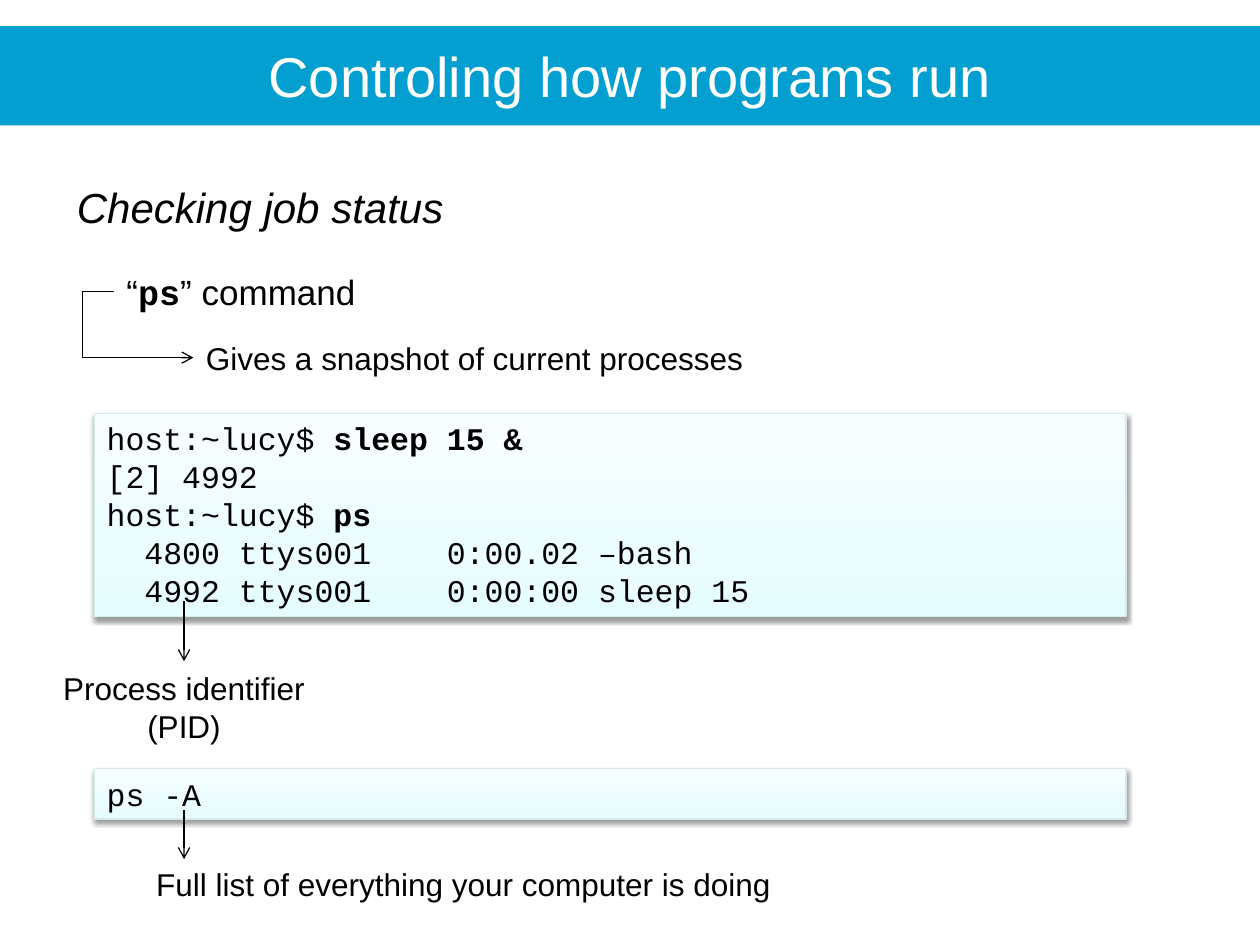
from dataclasses import dataclass

from lxml.etree import SubElement
from pptx import Presentation
from pptx.dml.color import RGBColor
from pptx.enum.shapes import MSO_CONNECTOR, MSO_SHAPE
from pptx.enum.text import MSO_ANCHOR, MSO_AUTO_SIZE, PP_ALIGN
from pptx.oxml.ns import qn
from pptx.util import Cm, Pt


@dataclass(frozen=True)
class Theme:
    body_font: str = "Arial"
    code_font: str = "Courier New"
    band: str = "039FD0"
    title: str = "FFFFFF"
    ink: str = "000000"
    code_border: str = "D5E8EA"
    code_gradient: tuple = ((0, "E6FDFF"), (35, "ECFDFF"), (100, "F8FEFF"))
    title_size: int = 32
    heading_size: int = 24
    topic_size: int = 20
    text_size: int = 18
    line_width: float = 0.75


@dataclass(frozen=True)
class Span:
    text: str
    code: bool = False
    bold: bool = False
    italic: bool = False


def code(text, bold=False):
    return Span(text, code=True, bold=bold)


def add_colour(parent, colour):
    return SubElement(parent, qn("a:srgbClr"), val=colour)


class SlideBuilder:
    def __init__(self, slide, theme):
        self.slide = slide
        self.theme = theme

    def fill_text(self, shape, lines, size, colour=None, alignment=PP_ALIGN.LEFT):
        """Fill a shape with paragraphs, each given as a list of spans."""
        frame = shape.text_frame
        frame.word_wrap = True
        frame.auto_size = MSO_AUTO_SIZE.NONE
        frame.vertical_anchor = MSO_ANCHOR.TOP
        for index, spans in enumerate(lines):
            paragraph = frame.add_paragraph() if index else frame.paragraphs[0]
            paragraph.alignment = alignment
            for span in spans:
                run = paragraph.add_run()
                run.text = span.text
                font = run.font
                font.name = self.theme.code_font if span.code else self.theme.body_font
                font.size = Pt(size)
                font.bold = span.bold
                font.italic = span.italic
                font.color.rgb = RGBColor.from_string(colour or self.theme.ink)

    def rectangle(self, left, top, width, height):
        shape = self.slide.shapes.add_shape(
            MSO_SHAPE.RECTANGLE, Cm(left), Cm(top), Cm(width), Cm(height))
        shape.shadow.inherit = False
        return shape

    def title(self, text, left, top, width, height):
        title = self.slide.shapes.title
        title.left, title.top = Cm(left), Cm(top)
        title.width, title.height = Cm(width), Cm(height)
        self.fill_text(title, [[Span(text)]], self.theme.title_size,
                       self.theme.title, PP_ALIGN.CENTER)

    def band(self, left, top, width, height):
        """Draw the coloured band behind the title."""
        shape = self.rectangle(left, top, width, height)
        shape.fill.solid()
        shape.fill.fore_color.rgb = RGBColor.from_string(self.theme.band)
        shape.line.fill.background()
        self.slide.shapes.title.element.addprevious(shape.element)

    def text(self, spans, left, top, width, height, size=None,
             alignment=PP_ALIGN.LEFT):
        box = self.slide.shapes.add_textbox(Cm(left), Cm(top), Cm(width), Cm(height))
        self.fill_text(box, [spans], size or self.theme.text_size, alignment=alignment)

    def code_box(self, lines, left, top, width, height):
        shape = self.rectangle(left, top, width, height)
        shape.fill.gradient()
        shape.fill.gradient_angle = 90
        properties = shape.element.spPr
        stops = properties.find(".//" + qn("a:gsLst"))
        for stop in list(stops):
            stops.remove(stop)
        for position, colour in self.theme.code_gradient:
            add_colour(SubElement(stops, qn("a:gs"), pos=str(position * 1000)), colour)
        shape.line.color.rgb = RGBColor.from_string(self.theme.code_border)
        shape.line.width = Pt(self.theme.line_width)
        shadow = SubElement(
            properties.find(qn("a:effectLst")), qn("a:outerShdw"),
            blurRad=str(int(Pt(3.1))), dist=str(int(Pt(1.6))),
            dir="5400000", rotWithShape="0")
        SubElement(add_colour(shadow, self.theme.ink), qn("a:alpha"), val="38000")
        self.fill_text(shape, lines, self.theme.text_size)

    def arrow(self, start, end, bend=None):
        """Draw an arrow; bend places the elbow as a fraction of the width."""
        kind = MSO_CONNECTOR.STRAIGHT if bend is None else MSO_CONNECTOR.ELBOW
        connector = self.slide.shapes.add_connector(
            kind, *(Cm(length) for length in (*start, *end)))
        connector.line.color.rgb = RGBColor.from_string(self.theme.ink)
        connector.line.width = Pt(self.theme.line_width)
        properties = connector.element.spPr
        SubElement(properties.find(qn("a:ln")), qn("a:tailEnd"), type="arrow")
        SubElement(properties, qn("a:effectLst"))
        if bend is not None:
            guides = properties.find(".//" + qn("a:avLst"))
            SubElement(guides, qn("a:gd"), name="adj1",
                       fmla=f"val {round(bend * 100000)}")


def main():
    presentation = Presentation()
    presentation.slide_width, presentation.slide_height = Cm(25.4), Cm(19.05)
    slide = presentation.slides.add_slide(presentation.slide_layouts[5])
    theme = Theme()
    builder = SlideBuilder(slide, theme)

    builder.title("Controling how programs run", 0, 0.71, 25.4, 1.63)
    builder.band(0, 0.53, 25.4, 2)
    builder.text([Span("Checking job status", italic=True)],
                 1.3, 3.53, 19.2, 1.27, theme.heading_size)
    builder.text([Span("“"), code("ps", bold=True), Span("” command")],
                 2.3, 5.33, 18.6, 1.12, theme.topic_size)
    builder.text([Span("Gives a snapshot of current processes")],
                 3.9, 6.7, 20.6, 1.02)
    builder.arrow((2.3, 5.88), (3.9, 7.21), bend=-0.4)

    box_left, box_width, arrow_x = 1.9, 20.8, 3.71
    prompt = code("host:~lucy$ ")
    builder.code_box([
        [prompt, code("sleep 15 &", bold=True)],
        [code("[2] 4992")],
        [prompt, code("ps", bold=True)],
        [code("  4800 ttys001    0:00.02 –bash")],
        [code("  4992 ttys001    0:00:00 sleep 15")],
    ], box_left, 8.33, box_width, 4.1)
    builder.arrow((arrow_x, 12.12), (arrow_x, 13.33))
    builder.text([Span("Process identifier (PID)")],
                 0.71, 13.36, 6, 1.8, alignment=PP_ALIGN.CENTER)

    builder.code_box([[code("ps -A")]], box_left, 15.49, box_width, 1.02)
    builder.arrow((arrow_x, 16.33), (arrow_x, 17.32))
    builder.text([Span("Full list of everything your computer is doing")],
                 2.9, 17.32, 13.4, 1.02)

    presentation.save("out.pptx")


if __name__ == "__main__":
    main()
